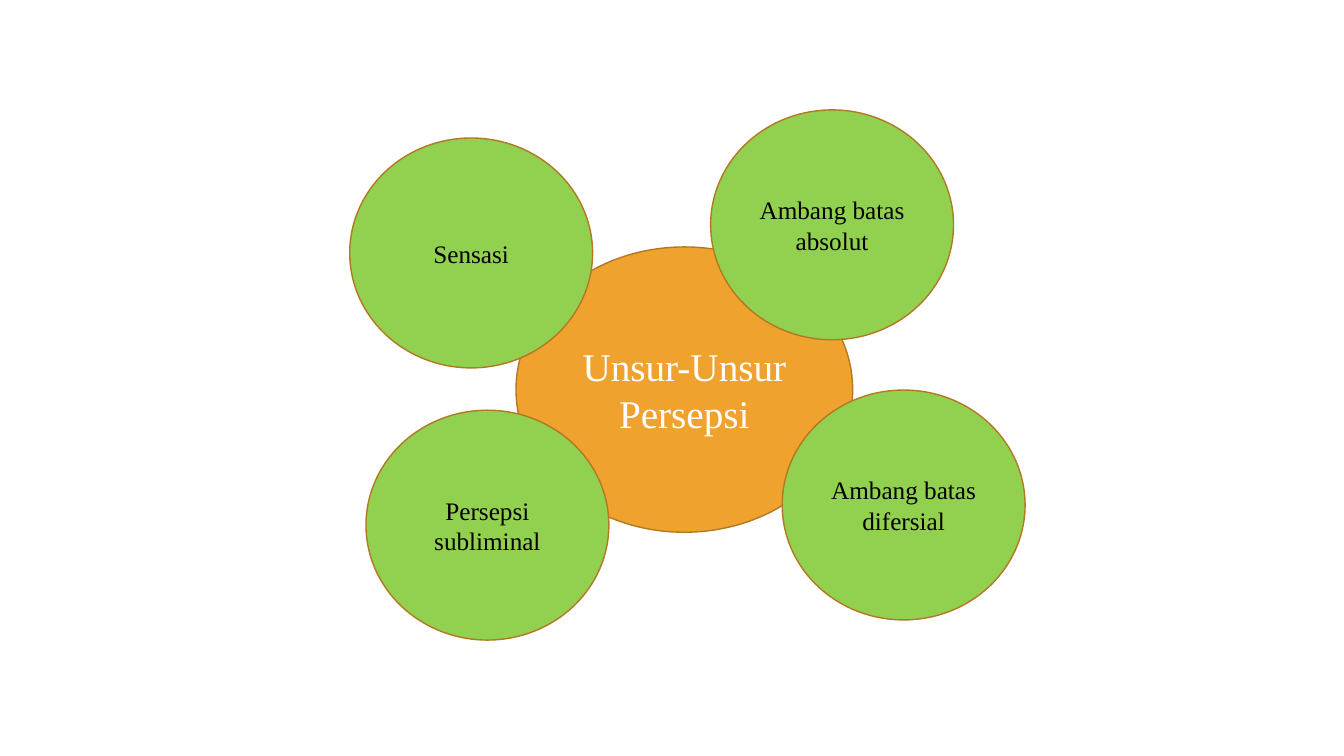
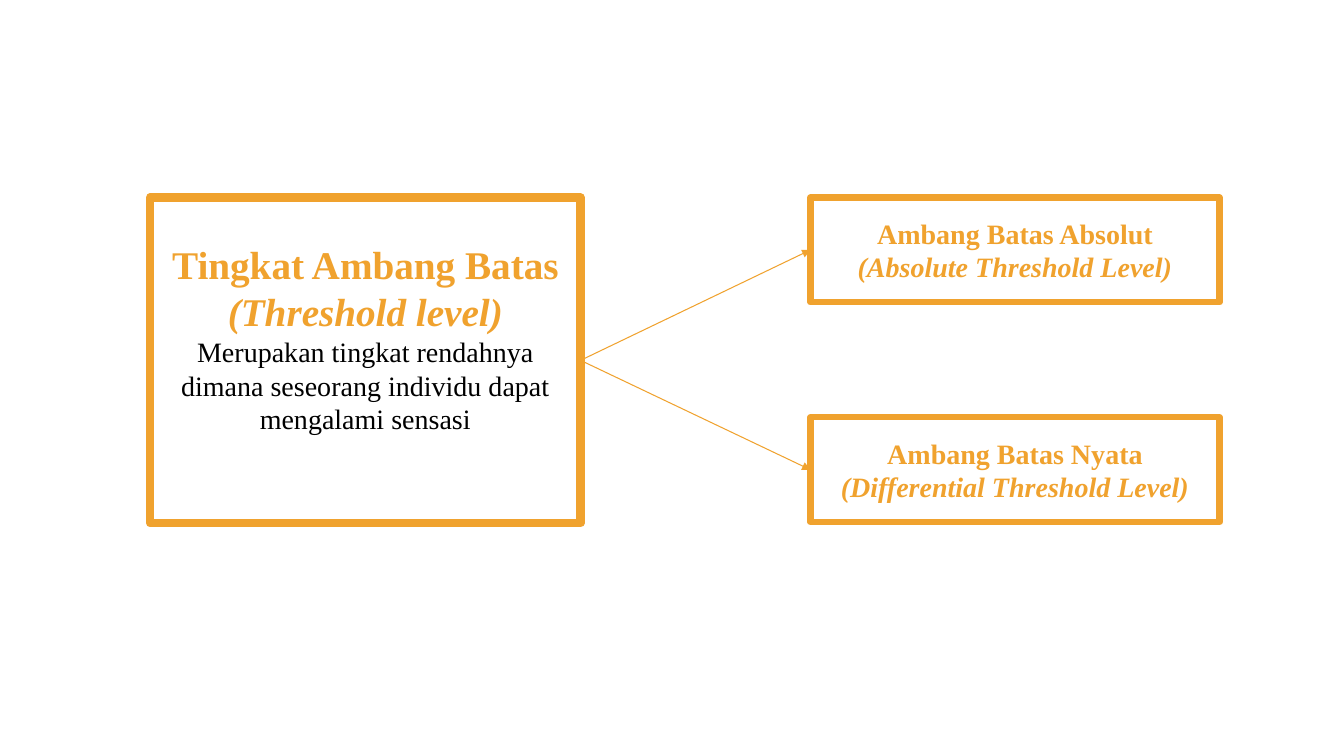
"""Build two slides on the elements of perception and its threshold levels."""
from dataclasses import dataclass

from pptx import Presentation
from pptx.dml.color import RGBColor
from pptx.enum.shapes import MSO_CONNECTOR as Connector, MSO_SHAPE as Preset
from pptx.enum.text import MSO_ANCHOR as Anchor, PP_ALIGN as Align
from pptx.oxml.ns import qn
from pptx.shapes.autoshape import Shape
from pptx.slide import Slide
from pptx.util import Pt
from lxml.etree import SubElement


@dataclass(frozen=True)
class Theme:
    font: str = "Times New Roman"
    orange: RGBColor = RGBColor(0xF0, 0xA2, 0x2E)
    brown: RGBColor = RGBColor(0xB2, 0x78, 0x22)
    green: RGBColor = RGBColor(0x92, 0xD0, 0x50)
    white: RGBColor = RGBColor(0xFF, 0xFF, 0xFF)
    black: RGBColor = RGBColor(0, 0, 0)
    heading: int = 28
    body: int = 20
    label: int = 18


THEME = Theme()


@dataclass(frozen=True)
class TextLine:
    text: str
    size: int
    color: RGBColor
    bold: bool = False
    italic: bool = False


@dataclass(frozen=True)
class Node:
    left: float
    top: float
    width: float
    height: float
    lines: tuple[TextLine, ...]
    fill: RGBColor
    outline: RGBColor
    outline_width: float
    preset: Preset
    bottom_inset: float = 3.6


def draw_node(slide: Slide, node: Node) -> Shape:
    shape = slide.shapes.add_shape(
        node.preset, Pt(node.left), Pt(node.top), Pt(node.width), Pt(node.height))
    shape.shadow.inherit = False
    shape.fill.solid()
    shape.fill.fore_color.rgb = node.fill
    shape.line.color.rgb = node.outline
    shape.line.width = Pt(node.outline_width)
    frame = shape.text_frame
    frame.word_wrap = True
    frame.vertical_anchor = Anchor.MIDDLE
    frame.margin_bottom = Pt(node.bottom_inset)
    for index, line in enumerate(node.lines):
        paragraph = frame.add_paragraph() if index else frame.paragraphs[0]
        paragraph.alignment = Align.CENTER
        run = paragraph.add_run()
        run.text = line.text
        run.font.name = THEME.font
        run.font.size = Pt(line.size)
        run.font.bold = line.bold
        run.font.italic = line.italic
        run.font.color.rgb = line.color
    return shape


def draw_arrow(slide: Slide, source: Shape, target: Shape) -> None:
    right_site, left_site = 3, 1
    arrow = slide.shapes.add_connector(Connector.STRAIGHT, 0, 0, 0, 0)
    arrow.begin_connect(source, right_site)
    arrow.end_connect(target, left_site)
    arrow.line.color.rgb = THEME.orange
    arrow.line.width = Pt(0.75)
    properties = arrow.element.spPr
    SubElement(properties.find(qn("a:ln")), qn("a:tailEnd"), type="triangle")
    SubElement(properties, qn("a:effectLst"))


def circle(left: float, top: float, width: float, height: float,
           line: TextLine, fill: RGBColor) -> Node:
    return Node(left, top, width, height, (line,), fill, THEME.brown, 1, Preset.OVAL)


def heading_pair(name: str, english: str, size: int) -> tuple[TextLine, ...]:
    return (TextLine(name, size, THEME.orange, bold=True),
            TextLine(english, size, THEME.orange, bold=True, italic=True))


def build_elements(slide: Slide) -> None:
    center = TextLine("Unsur-Unsur Persepsi", THEME.heading, THEME.white)
    draw_node(slide, circle(368.6, 176.4, 240.5, 203.8, center, THEME.orange))
    for left, top, name in (
        (507.6, 78.5, "Ambang batas absolut"),
        (558.7, 278.6, "Ambang batas difersial"),
        (249.8, 98.6, "Sensasi"),
        (261.4, 293, "Persepsi subliminal"),
    ):
        label = TextLine(name, THEME.label, THEME.black)
        draw_node(slide, circle(left, top, 173.5, 164.2, label, THEME.green))


def build_thresholds(slide: Slide) -> None:
    top = 141.1
    definition = TextLine(
        "Merupakan tingkat rendahnya dimana seseorang individu dapat mengalami sensasi",
        THEME.body, THEME.black)
    lines = heading_pair("Tingkat Ambang Batas", "(Threshold level)", THEME.heading)
    main_box = draw_node(slide, Node(
        107.3, top, 307.4, 232.6, (*lines, definition),
        THEME.white, THEME.orange, 6, Preset.RECTANGLE, bottom_inset=35.8))
    levels = (
        ("Ambang Batas Absolut", "(Absolute Threshold Level)"),
        ("Ambang Batas Nyata", "(Differential Threshold Level)"),
    )
    for index, (name, english) in enumerate(levels):
        level_box = draw_node(slide, Node(
            578.9, top + 157 * index, 292.3, 74.9,
            heading_pair(name, english, THEME.body),
            THEME.white, THEME.orange, 4.5, Preset.RECTANGLE))
        draw_arrow(slide, main_box, level_box)


def main() -> None:
    presentation = Presentation()
    presentation.slide_width, presentation.slide_height = Pt(960), Pt(540)
    blank_layout = presentation.slide_layouts[6]
    for build in (build_elements, build_thresholds):
        build(presentation.slides.add_slide(blank_layout))
    presentation.save("out.pptx")


if __name__ == "__main__":
    main()
